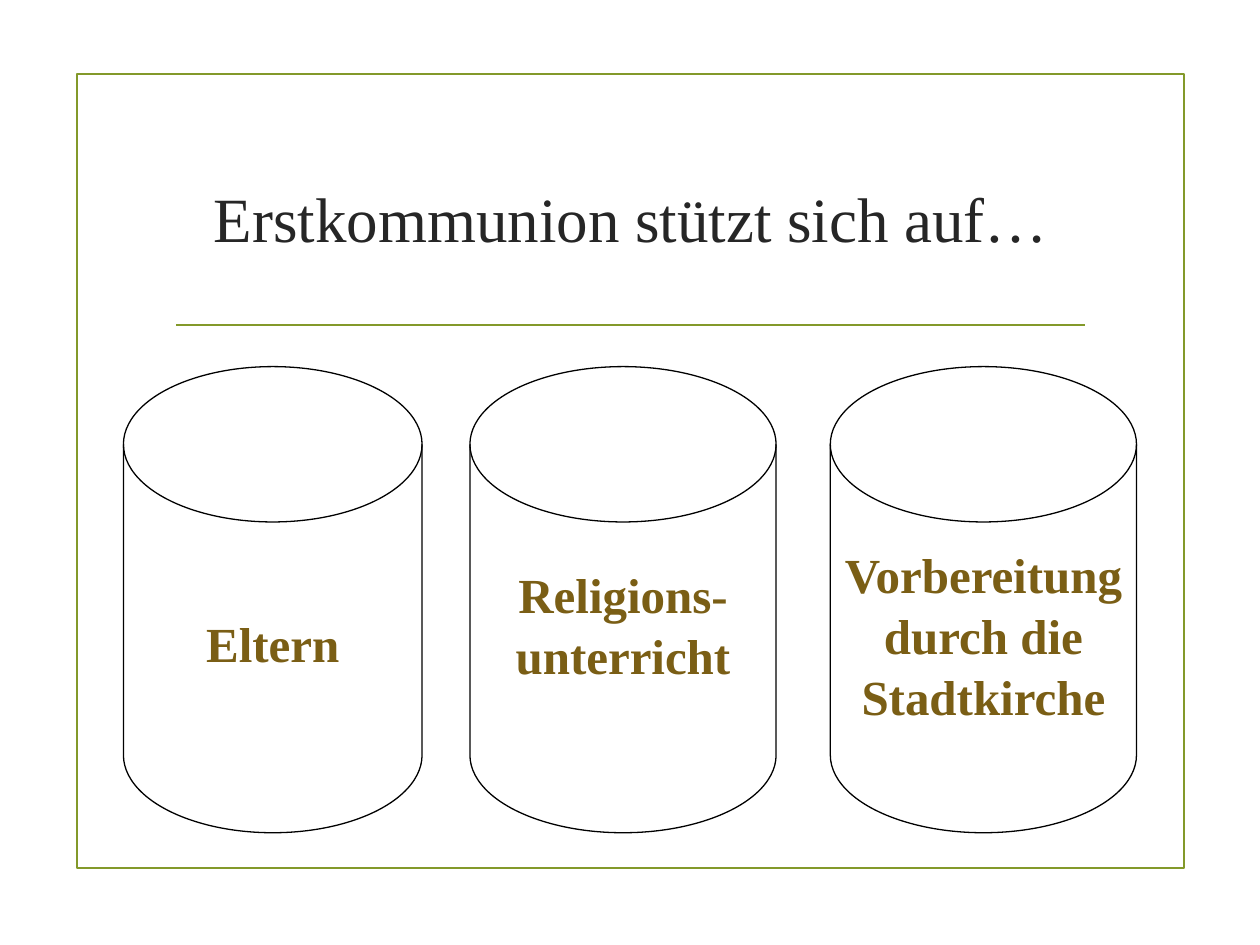
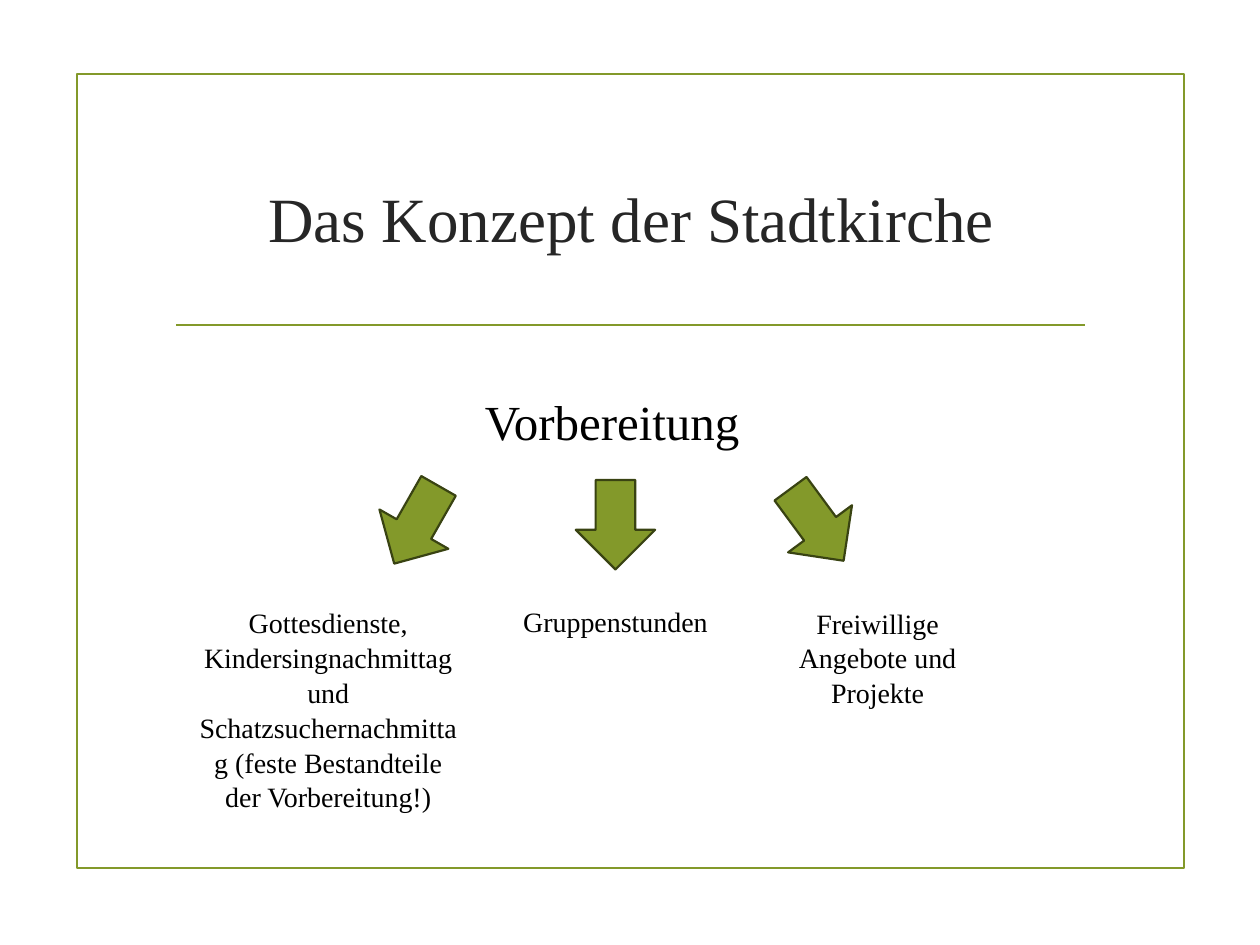
from pptx import Presentation
from pptx.dml.color import RGBColor
from pptx.enum.shapes import MSO_CONNECTOR, MSO_SHAPE
from pptx.enum.text import MSO_ANCHOR, PP_ALIGN
from pptx.oxml.ns import qn
from pptx.util import Inches, Pt

RECT, DISK, ARROW = MSO_SHAPE.RECTANGLE, MSO_SHAPE.FLOWCHART_MAGNETIC_DISK, MSO_SHAPE.DOWN_ARROW
LEFT, CENTER = PP_ALIGN.LEFT, PP_ALIGN.CENTER
TOP, MIDDLE = MSO_ANCHOR.TOP, MSO_ANCHOR.MIDDLE
FONT = "Times New Roman"
GREEN, DARK_GREEN, GOLD = "83992A", "394312", "7A5E15"
BLACK, TITLE_GREY = "000000", "262626"


def add_shape(s, kind, x, y, w, h, line, width, fill=None):
    sp = s.shapes.add_shape(kind, Inches(x), Inches(y), Inches(w), Inches(h))
    sp.shadow.inherit = False
    sp.line.color.rgb = RGBColor.from_string(line)
    sp.line.width = Pt(width)
    if fill:
        sp.fill.solid()
        sp.fill.fore_color.rgb = RGBColor.from_string(fill)
    else:
        sp.fill.background()
    return sp


def add_text(s, text, x, y, w, h, size, color=BLACK, bold=False, align=CENTER, anchor=TOP):
    sp = s.shapes.add_textbox(Inches(x), Inches(y), Inches(w), Inches(h))
    tf = sp.text_frame
    tf.word_wrap = True
    tf.vertical_anchor = anchor
    p = tf.paragraphs[0]
    p.text = text
    p.alignment = align
    p.line_spacing = 1.04
    p.font.name = FONT
    p.font.size = Pt(size)
    p.font.bold = bold
    p.font.color.rgb = RGBColor.from_string(color)


prs = Presentation()
prs.slide_width, prs.slide_height = Inches(10), Inches(7.5)

slides = []
for title in ["Erstkommunion stützt sich auf…", "Das Konzept der Stadtkirche"]:
    s = prs.slides.add_slide(prs.slide_layouts[6])
    add_shape(s, RECT, 0.61, 0.59, 8.79, 6.3, GREEN, 1.25)
    rule = s.shapes.add_connector(
        MSO_CONNECTOR.STRAIGHT, Inches(1.4), Inches(2.58), Inches(8.61), Inches(2.58))
    rule.line.color.rgb = RGBColor.from_string(GREEN)
    rule.line.width = Pt(1.25)
    sp_pr = rule._element.spPr
    sp_pr.append(sp_pr.makeelement(qn("a:effectLst"), {}))
    add_text(s, title, 1.29, 1, 7.44, 1.43, 36, TITLE_GREY, anchor=MIDDLE)
    slides.append(s)
pillars, concept = slides

for text, x, w, y, h in [
    ("Eltern", 0.98, 2.37, 4.8, 0.57),
    ("Religions-unterricht", 3.73, 2.43, 4.41, 1.04),
    ("Vorbereitung durch die Stadtkirche", 6.59, 2.43, 4.25, 1.51),
]:
    add_shape(pillars, DISK, x, 2.91, w, 3.7, BLACK, 0.75)
    add_text(pillars, text, x, y, w, h, 28, GOLD, bold=True)

add_text(concept, "Vorbereitung", 3.75, 3.04, 2.49, 0.57, 28, align=LEFT)
for text, x, y, w, h, arrow_x, rotation in [
    ("Gottesdienste, Kindersingnachmittag und Schatzsuchernachmittag "
     "(feste Bestandteile der Vorbereitung!)", 1.46, 4.67, 2.29, 1.91, 2.99, 29.7),
    ("Gruppenstunden", 3.98, 4.53, 1.81, 0.79, 4.57, 0),
    ("Freiwillige Angebote und Projekte", 6.06, 4.82, 1.81, 0.79, 6.17, 323.6),
]:
    arrow = add_shape(concept, ARROW, arrow_x, 3.81, 0.63, 0.71, DARK_GREEN, 1.25, GREEN)
    arrow.rotation = rotation
    add_text(concept, text, x, y, w, h, 16, anchor=MIDDLE)

prs.save("out.pptx")
